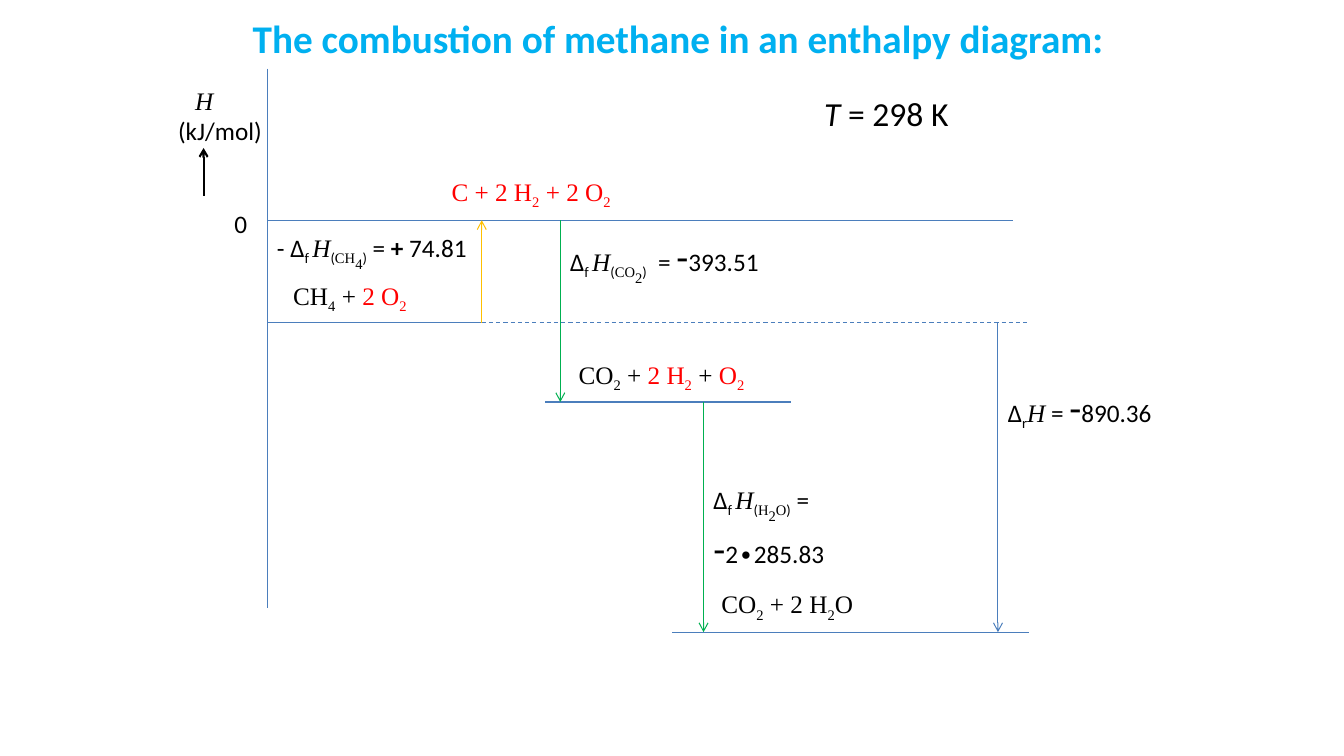
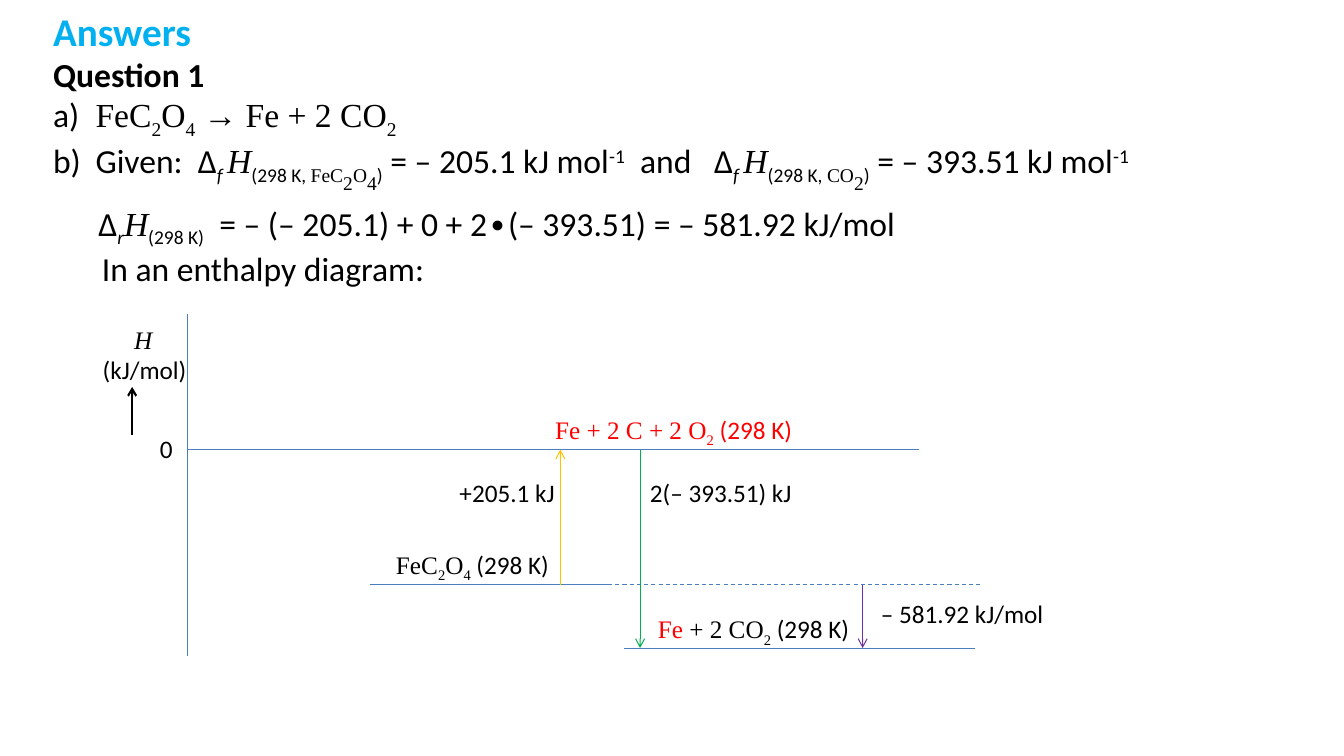
import itertools

import lxml.etree
import pptx
import pptx.dml.color
import pptx.enum.dml
import pptx.enum.shapes
import pptx.enum.text
import pptx.oxml.ns
import pptx.util

Cm, Pt = pptx.util.Cm, pptx.util.Pt
qn = pptx.oxml.ns.qn

SANS, SERIF = "Calibri", "Times New Roman"
BLACK, RED, SKY = "000000", "FF0000", "00B0F0"
BLUE, GREEN, GOLD, PURPLE = "4B7EBC", "00B050", "FFC000", "7030A0"


def rgb(code):
    return pptx.dml.color.RGBColor.from_string(code)


# Text pieces
def bit(text, **form):
    """Keys: font, size, color, bold, italic, base (percent), gap (points)."""
    return text, form


def chem(text, base=0, **form):
    """A formula whose digits after a letter are lowered."""
    def level(pair):
        prev, sign = pair
        return base - 25 if sign.isdigit() and prev.isalpha() else base

    pairs = zip(" " + text, text)
    return [bit("".join(sign for _, sign in part), font=SERIF, base=low, **form)
            for low, part in itertools.groupby(pairs, level)]


def delta(kind, *where, italic=False):
    """Enthalpy change, with an optional lowered bracket."""
    bits = [bit("Δ"), bit(kind, base=-25, italic=italic),
            bit("H", font=SERIF, italic=True)]
    if where:
        bits += [bit("(" + where[0], base=-25)]
        bits += chem(where[1], base=-25) if len(where) > 1 else []
        bits += [bit(")", base=-25)]
    return bits


def minus(value):
    return [bit("-", size=28), bit(value)]


class Deck:
    def __init__(self):
        self.file = pptx.Presentation()
        self.file.slide_width, self.file.slide_height = Cm(33.87), Cm(19.05)
        self.slide = None

    def page(self):
        self.slide = self.file.slides.add_slide(self.file.slide_layouts[6])

    def box(self, x, y, width, height=1.02):
        frame = self.slide.shapes.add_textbox(
            Cm(x), Cm(y), Cm(width), Cm(height)).text_frame
        frame.word_wrap = True
        return frame

    def para(self, frame, bits, size=18, after=0, left=0, hang=0, align=None):
        par = frame.paragraphs[0]
        if par.runs:
            par = frame.add_paragraph()
        par.space_after = Pt(after)
        par.alignment = align
        if left:
            props = par._p.get_or_add_pPr()
            props.set("marL", str(Cm(left)))
            props.set("indent", str(Cm(-hang)))
        for text, form in bits:
            run = par.add_run()
            run.text = text
            font = run.font
            font.name = form.get("font", SANS)
            font.size = Pt(form.get("size", size))
            font.bold = form.get("bold", False)
            font.italic = form.get("italic", False)
            font.color.rgb = rgb(form.get("color", BLACK))
            props = run._r.get_or_add_rPr()
            if form.get("base"):
                props.set("baseline", str(form["base"] * 1000))
            if form.get("gap"):
                props.set("spc", str(round(form["gap"] * 100)))

    def text(self, x, y, width, bits, **form):
        self.para(self.box(x, y, width), bits, **form)

    def line(self, x1, y1, x2, y2, color=BLUE, width=0.75, dash=False, head=False):
        link = self.slide.shapes.add_connector(
            pptx.enum.shapes.MSO_CONNECTOR.STRAIGHT, Cm(x1), Cm(y1), Cm(x2), Cm(y2))
        link.line.color.rgb = rgb(color)
        link.line.width = Pt(width)
        if dash:
            link.line.dash_style = pptx.enum.dml.MSO_LINE.DASH
        props = link._element.spPr
        if head:
            lxml.etree.SubElement(props.find(qn("a:ln")), qn("a:tailEnd"), type="arrow")
        lxml.etree.SubElement(props, qn("a:effectLst"))

    def level(self, x1, x2, y, **form):
        self.line(x1, y, x2, y, **form)

    def arrow(self, x, y1, y2, color, **form):
        self.line(x, y1, x, y2, color, head=True, **form)

    def axis(self, x, top, bottom, zero, right, unit, indent, up, mark):
        """Enthalpy axis with its zero level, unit and upward arrow."""
        self.line(x, top, x, bottom)
        self.level(x, right, zero)
        frame = self.box(*unit, 2.8, 1.7)
        self.para(frame, [bit("H", font=SERIF, italic=True)], left=indent)
        self.para(frame, [bit("(kJ/mol)")])
        self.text(*mark, 1.2, [bit("0")], align=pptx.enum.text.PP_ALIGN.RIGHT)
        self.arrow(up[0], up[1], up[1] - 1.2, BLACK, width=1.5)


def methane(deck):
    deck.page()
    zero, start, middle, end = 5.55, 8.13, 10.13, 15.93
    deck.text(6.12, 0.23, 23, [bit("The combustion of methane in an enthalpy diagram:",
                                   color=SKY, bold=True)], size=28)
    deck.text(20.52, 2.21, 5.2, [bit("T", italic=True), bit(" = 298 K")], size=24)
    deck.axis(6.73, 1.73, 15.32, zero, 25.53, unit=(4.24, 2.03), indent=0.43,
              up=(5.13, 4.93), mark=(5.28, 5.12))

    # Levels
    deck.level(6.73, 12.14, start)
    deck.level(12.14, 25.93, start, dash=True)
    deck.level(13.74, 19.94, middle)
    deck.level(16.94, 25.93, end)

    # Steps
    deck.arrow(12.14, start, zero, GOLD)
    deck.arrow(14.12, zero, middle, GREEN)
    deck.arrow(17.73, middle, end, GREEN)
    deck.arrow(25.15, start, end, BLUE)

    # Substances
    deck.text(11.13, 4.32, 7.8, chem("C + 2 H2 + 2 O2", color=RED))
    deck.text(7.14, 6.93, 7, chem("CH4 + ") + chem("2 O2", color=RED))
    deck.text(14.33, 8.92, 7.8, chem("CO2 + ") + chem("2 H2", color=RED)
              + chem(" + ") + chem("O2", color=RED))
    deck.text(17.93, 14.71, 7.8, chem("CO2 + 2 H2O"))

    # Enthalpy changes
    deck.text(6.73, 5.72, 6.4, [bit("- ")] + delta("f ", "", "CH4")
              + [bit(" = "), bit("+", bold=True), bit(" 74.81")])
    deck.text(14.12, 5.72, 6.2, delta("f ", "", "CO2")
              + [bit(" ", gap=4), bit("= ")] + minus("393.51"))
    frame = deck.box(17.73, 12.07, 5.8, 2.4)
    deck.para(frame, delta("f ", "", "H2O") + [bit(" =")])
    deck.para(frame, minus("2∙285.83"))
    deck.text(25.15, 9.53, 4.5, delta("r") + [bit(" = ")] + minus("890.36"))


def answers(deck):
    deck.page()
    zero, start, end = 11.33, 14.73, 16.33
    wide = bit(" ", gap=5.4)
    molar = [bit("-1", base=30)]

    # Worked answer
    frame = deck.box(1.09, 0.05, 32.26, 5.77)
    deck.para(frame, [bit("Answers", color=SKY, bold=True)], size=28)
    deck.para(frame, [bit("Question 1", bold=True)], size=24)
    deck.para(frame, [bit("a)\t")] + chem("FeC2O4 → Fe + 2 CO2"),
              size=24, left=1.07, hang=1.07)
    deck.para(frame, [bit("b)\tGiven:"), wide]
              + delta("f ", "298 K, ", "FeC2O4", italic=True)
              + [bit(" = – 205.1 kJ mol")] + molar
              + [wide, bit("and"), bit(" ", gap=10.8)]
              + delta("f ", "298 K, ", "CO2", italic=True)
              + [bit(" = – 393.51 kJ mol")] + molar,
              size=24, after=6, left=1.07, hang=1.07)
    deck.para(frame, delta("r", "298 K", italic=True)
              + [wide, bit("= – (– 205.1) + 0 + 2∙(– 393.51) = – 581.92 kJ/mol")],
              size=24, after=6, left=1.14)
    deck.text(2.32, 6.12, 9.5, [bit("In an enthalpy diagram:")], size=24)

    deck.axis(4.72, 7.92, 16.54, zero, 23.16, unit=(2.34, 8.05), indent=0.79,
              up=(3.33, 10.95), mark=(3.4, 10.8))

    # Levels
    deck.level(9.32, 15.42, start)
    deck.level(15.14, 24.74, start, dash=True)
    deck.level(15.72, 24.56, end)

    # Steps
    deck.arrow(14.12, start, zero, GOLD)
    deck.arrow(16.13, zero, end, GREEN)
    deck.arrow(21.74, start, end, PURPLE)

    # Substances
    deck.text(13.74, 10.31, 7.6, chem("Fe + 2 C + 2 O2", color=RED)
              + [bit(" (298 K)", color=RED)])
    deck.text(9.73, 13.72, 6.9, chem("FeC2O4") + [bit(" (298 K)")])
    deck.text(16.33, 15.34, 7.6, chem("Fe", color=RED) + chem(" + 2 CO2")
              + [bit(" (298 K)")])

    # Enthalpy changes
    deck.text(11.33, 11.91, 3.3, [bit("+205.1 kJ")])
    deck.text(16.13, 11.91, 4.4, [bit("2(– 393.51) kJ")])
    deck.text(21.95, 14.94, 5, [bit("– 581.92 kJ/mol")])


def main():
    deck = Deck()
    methane(deck)
    answers(deck)
    deck.file.save("out.pptx")


if __name__ == "__main__":
    main()
